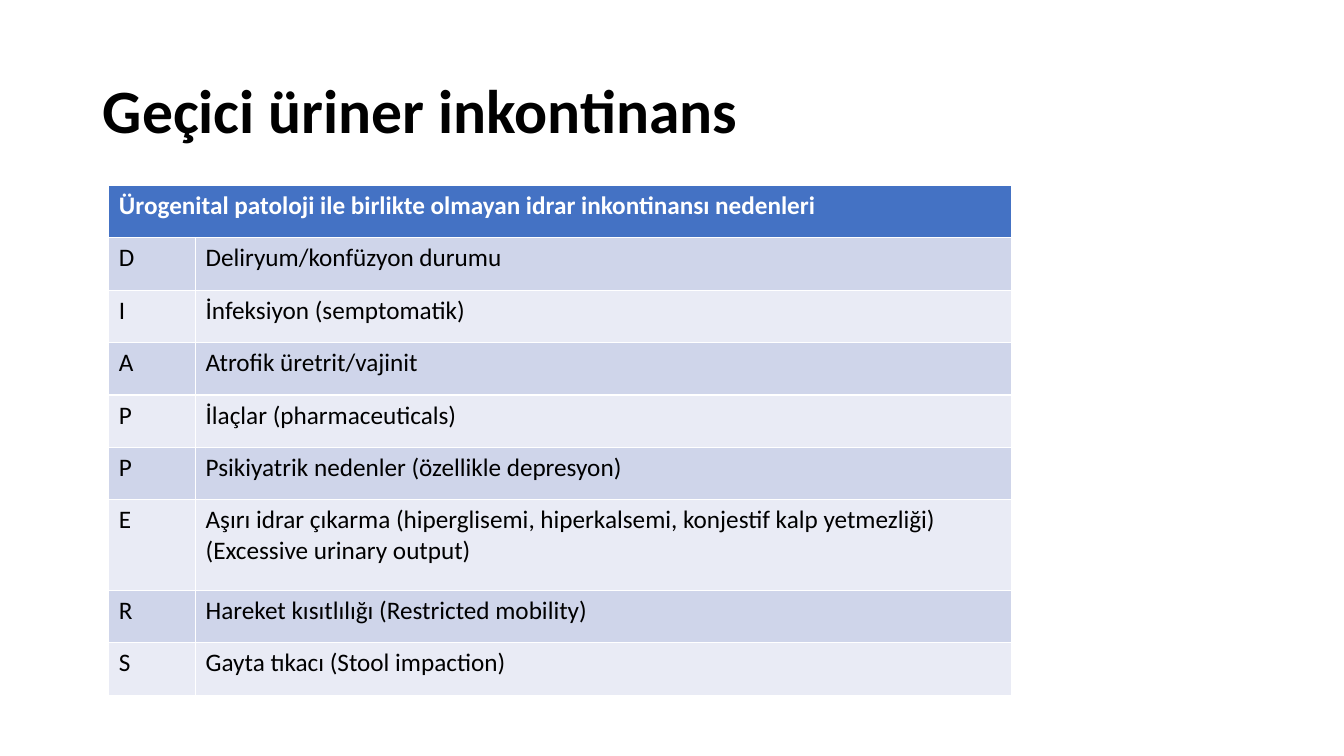
"""Build the slide on transient urinary incontinence with its DIAPPERS table."""
from pptx import Presentation
from pptx.dml.color import RGBColor
from pptx.enum.text import MSO_ANCHOR, PP_ALIGN
from pptx.util import Inches, Pt

COLORS = {
    "title": "000000",
    "header": "4472C4",
    "header_text": "FFFFFF",
    "band_dark": "CFD5EA",
    "band_light": "E9EBF5",
    "body_text": "000000",
}
FONT = "Calibri"
HEADER = "Ürogenital patoloji ile birlikte olmayan idrar inkontinansı nedenleri"
CAUSES = [
    ("D", "Deliryum/konfüzyon durumu"),
    ("I", "İnfeksiyon (semptomatik)"),
    ("A", "Atrofik üretrit/vajinit"),
    ("P", "İlaçlar (pharmaceuticals)"),
    ("P", "Psikiyatrik nedenler (özellikle depresyon)"),
    ("E", "Aşırı idrar çıkarma (hiperglisemi, hiperkalsemi, konjestif kalp "
          "yetmezliği) (Excessive urinary output)"),
    ("R", "Hareket kısıtlılığı (Restricted mobility)"),
    ("S", "Gayta tıkacı (Stool impaction)"),
]
COLUMN_WIDTHS = [0.86, 8.09]
ROW_HEIGHT, TALL_ROW_HEIGHT = 0.52, 0.9


def style_text(paragraph, size, color, bold):
    """Set the font of a whole paragraph."""
    font = paragraph.font
    font.name, font.size, font.bold = FONT, Pt(size), bold
    font.color.rgb = RGBColor.from_string(COLORS[color])


def fill_cell(cell, text, fill, color, bold=False):
    """Write a table cell on a solid background."""
    cell.text = text
    cell.fill.solid()
    cell.fill.fore_color.rgb = RGBColor.from_string(COLORS[fill])
    style_text(cell.text_frame.paragraphs[0], 18, color, bold)


presentation = Presentation()
presentation.slide_width, presentation.slide_height = Inches(13.33), Inches(7.5)
slide = presentation.slides.add_slide(presentation.slide_layouts[5])

title = slide.shapes.title
title.left, title.top = Inches(0.92), Inches(0.4)
title.width, title.height = Inches(11.5), Inches(1.45)
title.text_frame.text = "Geçici üriner inkontinans"
title.text_frame.vertical_anchor = MSO_ANCHOR.MIDDLE
heading = title.text_frame.paragraphs[0]
heading.alignment = PP_ALIGN.LEFT
heading.line_spacing = 0.9
style_text(heading, 44, "title", True)

row_heights = [ROW_HEIGHT] + [
    TALL_ROW_HEIGHT if letter == "E" else ROW_HEIGHT for letter, _ in CAUSES
]
table = slide.shapes.add_table(
    len(row_heights), len(COLUMN_WIDTHS), Inches(1.08), Inches(1.84),
    Inches(sum(COLUMN_WIDTHS)), Inches(sum(row_heights)),
).table
for column, width in zip(table.columns, COLUMN_WIDTHS):
    column.width = Inches(width)
for row, height in zip(table.rows, row_heights):
    row.height = Inches(height)

table.cell(0, 0).merge(table.cell(0, 1))
fill_cell(table.cell(0, 0), HEADER, "header", "header_text", bold=True)
for row_index, cause in enumerate(CAUSES, start=1):
    band = "band_dark" if row_index % 2 else "band_light"
    for column_index, text in enumerate(cause):
        fill_cell(table.cell(row_index, column_index), text, band, "body_text")

presentation.save("out.pptx")
